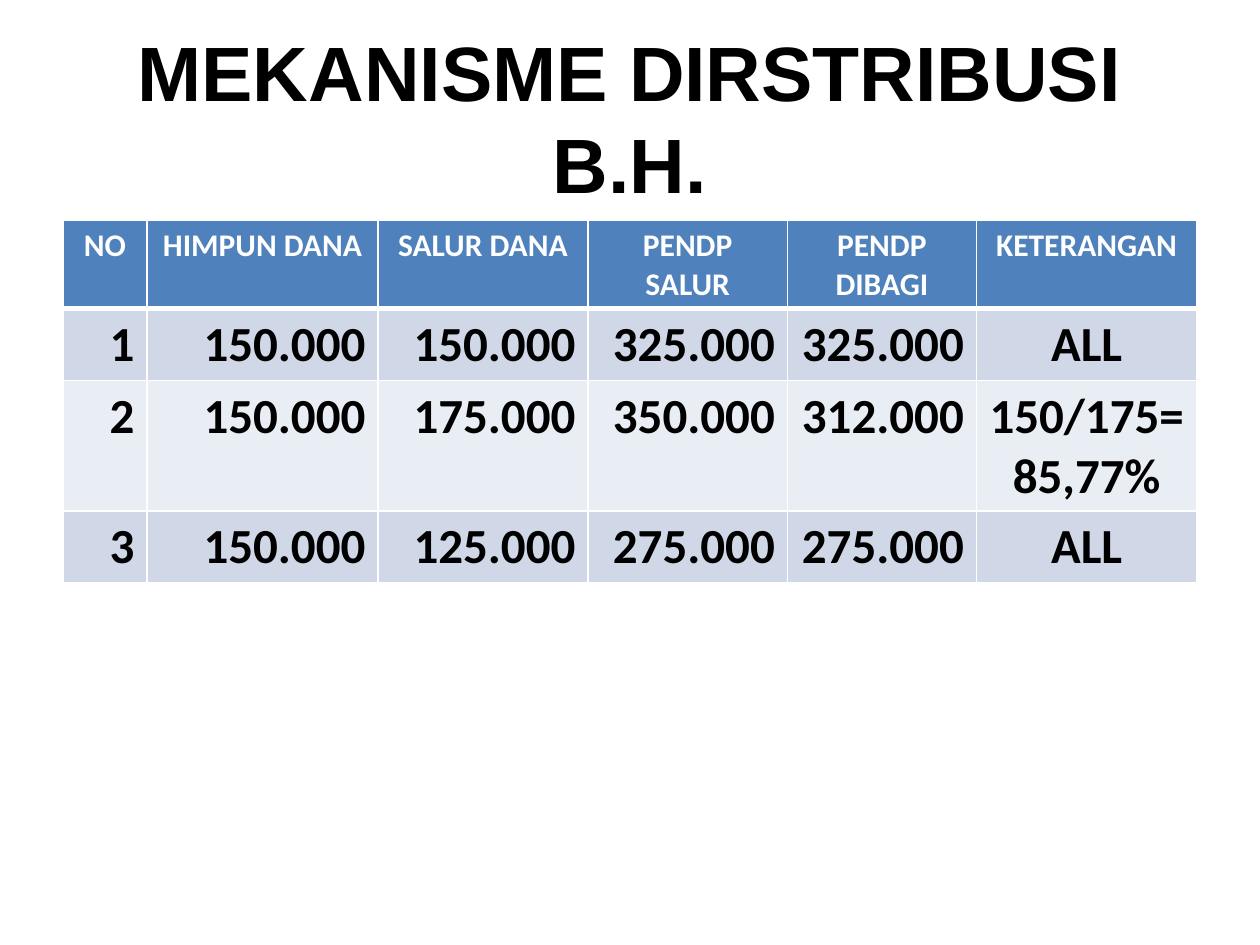
from dataclasses import dataclass

from lxml.etree import SubElement
from pptx import Presentation
from pptx.dml.color import RGBColor
from pptx.enum.text import MSO_ANCHOR as Anchor, PP_ALIGN as Align
from pptx.oxml.ns import qn
from pptx.util import Inches, Pt

WHITE = RGBColor(0xFF, 0xFF, 0xFF)
BLACK = RGBColor(0x00, 0x00, 0x00)
BLUE = RGBColor(0x4F, 0x81, 0xBD)
BAND_DARK = RGBColor(0xD0, 0xD8, 0xE8)
BAND_LIGHT = RGBColor(0xE9, 0xED, 0xF4)

WIDTH, HEIGHT = Inches(10), Inches(7.5)
GRID_UNIT = WIDTH // 120
MARGIN = 6 * GRID_UNIT
CONTENT_WIDTH = WIDTH - 2 * MARGIN


@dataclass(frozen=True)
class TextStyle:
    font: str
    size: int
    color: RGBColor


@dataclass(frozen=True)
class Column:
    heading: str
    units: int
    align: Align
    values: tuple[str, ...]


@dataclass(frozen=True)
class Row:
    height: float
    fill: RGBColor
    style: TextStyle
    bottom_border: int = 1


TITLE_STYLE = TextStyle("Arial", 44, BLACK)
HEADER_STYLE = TextStyle("Calibri", 18, WHITE)
BODY_STYLE = TextStyle("Calibri", 28, BLACK)

COLUMNS = (
    Column("NO", 8, Align.RIGHT, ("1", "2", "3")),
    Column("HIMPUN DANA", 22, Align.RIGHT, ("150.000", "150.000", "150.000")),
    Column("SALUR DANA", 20, Align.RIGHT, ("150.000", "175.000", "125.000")),
    Column("PENDP SALUR", 19, Align.RIGHT, ("325.000", "350.000", "275.000")),
    Column("PENDP DIBAGI", 18, Align.RIGHT, ("325.000", "312.000", "275.000")),
    Column("KETERANGAN", 21, Align.CENTER, ("ALL", "150/175= 85,77%", "ALL")),
)
ROWS = (
    Row(0.7, BLUE, HEADER_STYLE, 3),
    Row(0.57, BAND_DARK, BODY_STYLE),
    Row(1.03, BAND_LIGHT, BODY_STYLE),
    Row(0.57, BAND_DARK, BODY_STYLE),
)


def write(frame, text: str, style: TextStyle, align: Align) -> None:
    para = frame.paragraphs[0]
    para.text = text
    para.alignment = align
    para.font.name = style.font
    para.font.size = Pt(style.size)
    para.font.bold = True
    para.font.color.rgb = style.color


def add_borders(cell, top: int, bottom: int) -> None:
    properties = cell._tc.get_or_add_tcPr()
    for side, points in (("L", 1), ("R", 1), ("T", top), ("B", bottom)):
        line = SubElement(properties, qn(f"a:ln{side}"), w=str(Pt(points)))
        fill = SubElement(line, qn("a:solidFill"))
        SubElement(fill, qn("a:srgbClr"), val=str(WHITE))


def add_title(page, text: str) -> None:
    box = page.shapes.add_textbox(MARGIN, int(HEIGHT * 0.04), CONTENT_WIDTH, HEIGHT // 6)
    box.text_frame.word_wrap = True
    box.text_frame.vertical_anchor = Anchor.MIDDLE
    write(box.text_frame, text, TITLE_STYLE, Align.CENTER)


def add_distribution_table(page) -> None:
    height = Inches(sum(row.height for row in ROWS))
    table = page.shapes.add_table(
        len(ROWS), len(COLUMNS), MARGIN, Inches(1.75), CONTENT_WIDTH, height
    ).table
    for index, column in enumerate(COLUMNS):
        table.columns[index].width = column.units * GRID_UNIT
    top_border = 1
    for row_index, row in enumerate(ROWS):
        table.rows[row_index].height = Inches(row.height)
        for column_index, column in enumerate(COLUMNS):
            cell = table.cell(row_index, column_index)
            add_borders(cell, top_border, row.bottom_border)
            cell.fill.solid()
            cell.fill.fore_color.rgb = row.fill
            text = (column.heading, *column.values)[row_index]
            align = column.align if row_index else Align.CENTER
            write(cell.text_frame, text, row.style, align)
        top_border = row.bottom_border


def main() -> None:
    deck = Presentation()
    deck.slide_width, deck.slide_height = WIDTH, HEIGHT
    page = deck.slides.add_slide(deck.slide_layouts[6])
    add_title(page, "MEKANISME DIRSTRIBUSI B.H.")
    add_distribution_table(page)
    deck.save("out.pptx")


if __name__ == "__main__":
    main()
